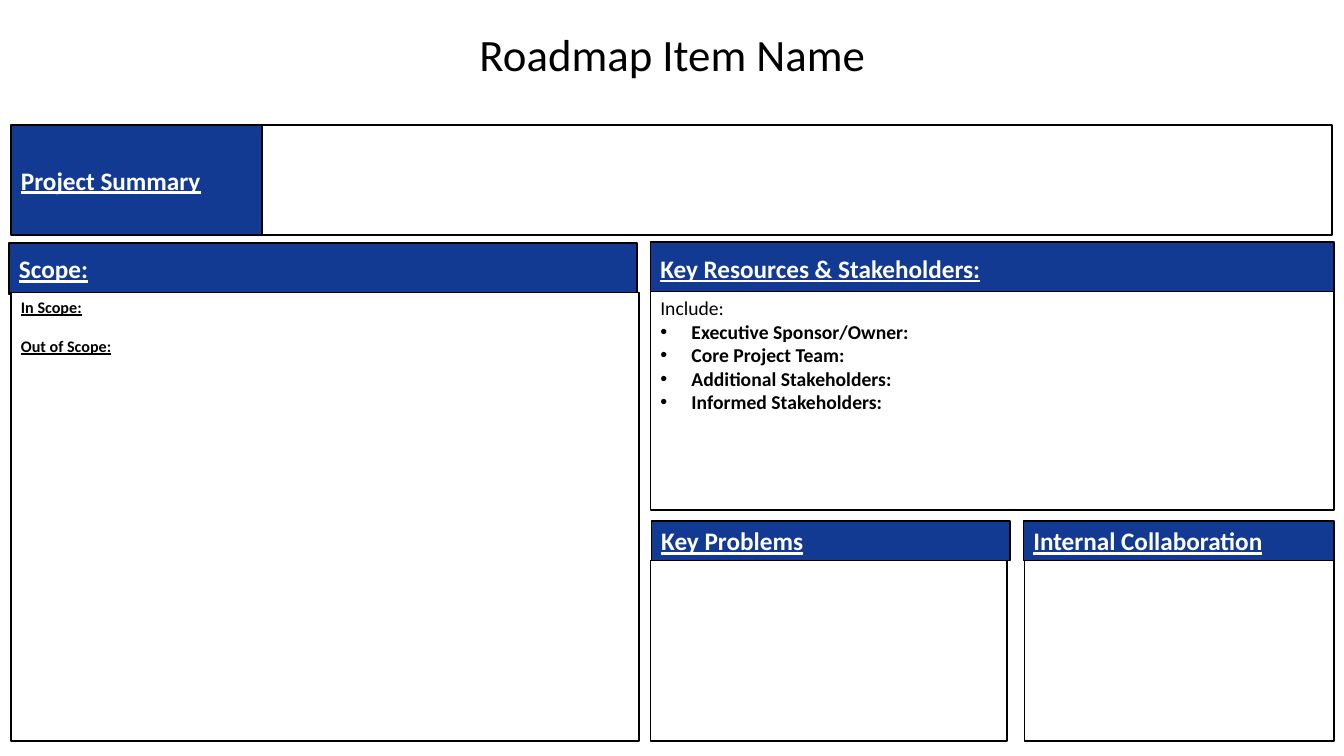
from lxml import etree
from pptx import Presentation
from pptx.dml.color import RGBColor
from pptx.enum.shapes import MSO_SHAPE
from pptx.enum.text import MSO_ANCHOR, PP_ALIGN
from pptx.oxml.ns import qn
from pptx.util import Inches, Pt

RECTANGLE = MSO_SHAPE.RECTANGLE
TOP, MIDDLE, BOTTOM = MSO_ANCHOR.TOP, MSO_ANCHOR.MIDDLE, MSO_ANCHOR.BOTTOM
LEFT, CENTER = PP_ALIGN.LEFT, PP_ALIGN.CENTER

THEME = {
    "font": "Calibri",
    "blue": RGBColor(0x12, 0x3A, 0x92),
    "white": RGBColor(0xFF, 0xFF, 0xFF),
    "black": RGBColor(0, 0, 0),
    "title": Pt(32),
    "heading": Pt(18),
    "body": Pt(14),
    "scope": Pt(11.5),
    "line": Pt(1),
}


def add_panel(page, place, fill, anchor):
    box = page.shapes.add_shape(RECTANGLE, *map(Inches, place))
    box.shadow.inherit = False
    box.fill.solid()
    box.fill.fore_color.rgb = THEME[fill]
    box.line.color.rgb = THEME["black"]
    box.line.width = THEME["line"]
    box.text_frame.word_wrap = True
    box.text_frame.vertical_anchor = anchor
    return box.text_frame


def write(para, text, size, color="black", bold=False, underline=False, align=LEFT):
    para.text = text
    para.alignment = align
    para.font.name = THEME["font"]
    para.font.size = THEME[size]
    para.font.color.rgb = THEME[color]
    para.font.bold = bold
    para.font.underline = underline


deck = Presentation()
deck.slide_width = Inches(13.33)
deck.slide_height = Inches(7.5)
page = deck.slides.add_slide(deck.slide_layouts[6])

SECTIONS = [
    ("Project Summary", (0.11, 1.24, 2.5, 1.09), (2.6, 1.24, 10.61, 1.09)),
    ("Key Resources & Stakeholders:", (6.45, 2.4, 6.78, 0.52), (6.45, 2.89, 6.78, 2.17)),
    ("Scope:", (0.09, 2.41, 6.23, 0.51), (0.11, 2.9, 6.23, 4.45)),
    ("Internal Collaboration", (10.15, 5.17, 3.08, 0.39), (10.16, 5.56, 3.07, 1.79)),
    ("Key Problems", (6.46, 5.17, 3.56, 0.39), (6.45, 5.56, 3.54, 1.79)),
]
bodies = {}
for heading, heading_place, body_place in SECTIONS:
    frame = add_panel(page, heading_place, "blue", MIDDLE)
    write(frame.paragraphs[0], heading, "heading", "white", bold=True, underline=True)
    bodies[heading] = add_panel(page, body_place, "white", TOP)

resources = bodies["Key Resources & Stakeholders:"]
write(resources.paragraphs[0], "Include:", "body")
for role in (
    "Executive Sponsor/Owner:",
    "Core Project Team:",
    "Additional Stakeholders:",
    "Informed Stakeholders:",
):
    para = resources.add_paragraph()
    properties = para._p.get_or_add_pPr()
    properties.set("marL", str(Inches(0.31)))
    properties.set("indent", str(Inches(-0.31)))
    etree.SubElement(properties, qn("a:buFont")).set("typeface", "Arial")
    etree.SubElement(properties, qn("a:buChar")).set("char", "•")
    write(para, role, "body", bold=True)

scope = bodies["Scope:"]
write(scope.paragraphs[0], "In Scope:", "scope", bold=True, underline=True)
para = scope.add_paragraph()
para.space_before = Pt(14)
write(para, "Out of Scope:", "scope", bold=True, underline=True)

title = page.shapes.add_textbox(Inches(0.92), Inches(-0.03), Inches(11.5), Inches(0.88))
title.text_frame.word_wrap = True
title.text_frame.vertical_anchor = BOTTOM
para = title.text_frame.paragraphs[0]
para.line_spacing = 0.9
write(para, "Roadmap Item Name", "title", align=CENTER)

deck.save("out.pptx")
